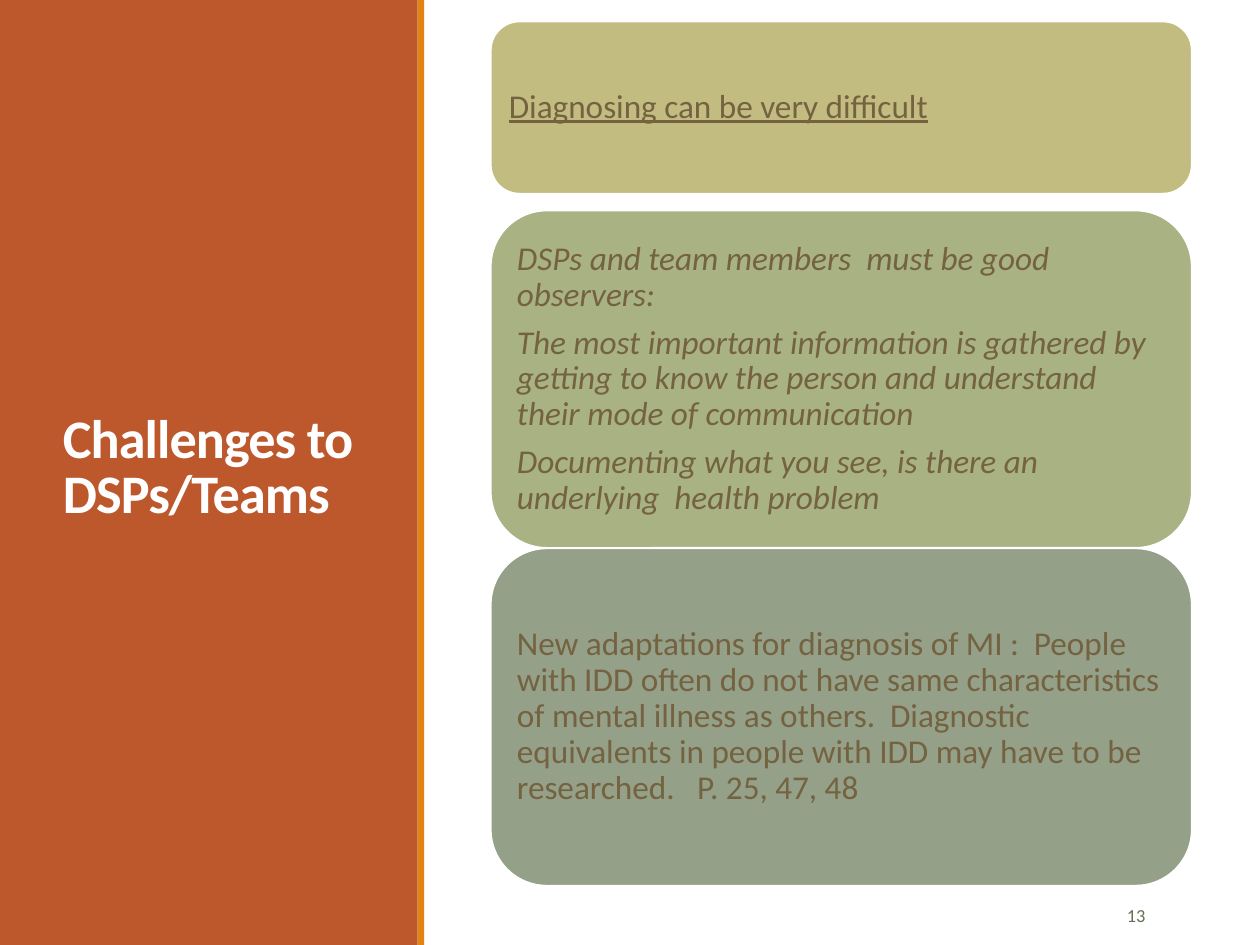
import pptx
import pptx.dml.color
import pptx.enum.shapes
import pptx.enum.text
import pptx.util

Cm = pptx.util.Cm
Pt = pptx.util.Pt
SHAPES = pptx.enum.shapes.MSO_SHAPE
ALIGN = pptx.enum.text.PP_ALIGN

SLIDE_WIDTH, SLIDE_HEIGHT = 25.4, 19.05
PANEL_WIDTH = 8.42
CARD_INSET = 0.2
CARDS = [
    (0.43, 3.48, "C2BC80", {"underline": True}, ["Diagnosing can be very difficult"]),
    (4.24, 6.81, "A8B283", {"italic": True}, [
        "DSPs and team members  must be good observers:",
        "The most important information is gathered by getting to know the person "
        "and understand their mode of communication",
        "Documenting what you see, is there an underlying  health problem",
    ]),
    (11.05, 6.81, "94A088", {}, [
        "New adaptations for diagnosis of MI :  People with IDD often do not have "
        "same characteristics of mental illness as others.  Diagnostic equivalents "
        "in people with IDD may have to be researched.   P. 25, 47, 48",
    ]),
]


def color(value):
    return pptx.dml.color.RGBColor.from_string(value)


def add_block(slide, kind, box, fill, line=None):
    shape = slide.shapes.add_shape(kind, *map(Cm, box))
    shape.shadow.inherit = False
    shape.fill.solid()
    shape.fill.fore_color.rgb = color(fill)
    if line:
        shape.line.color.rgb = color(line)
        shape.line.width = Pt(1.25)
    else:
        shape.line.fill.background()
    return shape


def write_text(shape, texts, size, text_color, spacing=1.0, after=0,
               alignment=ALIGN.LEFT, **styles):
    frame = shape.text_frame
    frame.word_wrap = True
    frame.vertical_anchor = pptx.enum.text.MSO_ANCHOR.MIDDLE
    for index, text in enumerate(texts):
        paragraph = frame.add_paragraph() if index else frame.paragraphs[0]
        paragraph.alignment = alignment
        paragraph.line_spacing = spacing
        paragraph.space_after = Pt(after)
        run = paragraph.add_run()
        run.text = text
        run.font.name = "Calibri"
        run.font.size = Pt(size)
        run.font.color.rgb = color(text_color)
        for name, value in styles.items():
            setattr(run.font, name, value)


def add_title_panel(slide, left, top, width, height):
    add_block(slide, SHAPES.RECTANGLE, (left, top, width, height), "BD582C")
    title = slide.shapes.add_textbox(Cm(left + 1.02), Cm(top + 1.45), Cm(6.43), Cm(16.03))
    write_text(title, ["Challenges to DSPs/Teams"], 31, "FFFFFF", spacing=0.85, bold=True)
    run = title.text_frame.paragraphs[0].runs[0]
    run.font._element.set("spc", "-50")
    add_block(slide, SHAPES.RECTANGLE, (left + width, top, 0.13, height), "E48312")


def add_cards(slide, left, width):
    for top, height, fill, styles, texts in CARDS:
        card = add_block(slide, SHAPES.ROUNDED_RECTANGLE, (left, top, width, height),
                         fill, "FFFFFF")
        frame = card.text_frame
        frame.margin_left = frame.margin_right = Cm(CARD_INSET)
        frame.margin_top = frame.margin_bottom = Cm(CARD_INSET)
        write_text(card, texts, 19, "746241", spacing=0.9, after=6.65, **styles)


def add_slide_number(slide, left, top, width, height):
    number = slide.shapes.add_textbox(Cm(left), Cm(top), Cm(width), Cm(height))
    write_text(number, ["13"], 10.5, "637052", after=6, alignment=ALIGN.RIGHT)


def main():
    presentation = pptx.Presentation()
    presentation.slide_width = Cm(SLIDE_WIDTH)
    presentation.slide_height = Cm(SLIDE_HEIGHT)
    slide = presentation.slides.add_slide(presentation.slide_layouts[6])
    add_title_panel(slide, 0, 0, PANEL_WIDTH, SLIDE_HEIGHT)
    add_slide_number(slide, 21.08, 17.93, 2.26, 1.02)
    add_cards(slide, 9.89, 14.14)
    presentation.save("out.pptx")


if __name__ == "__main__":
    main()
